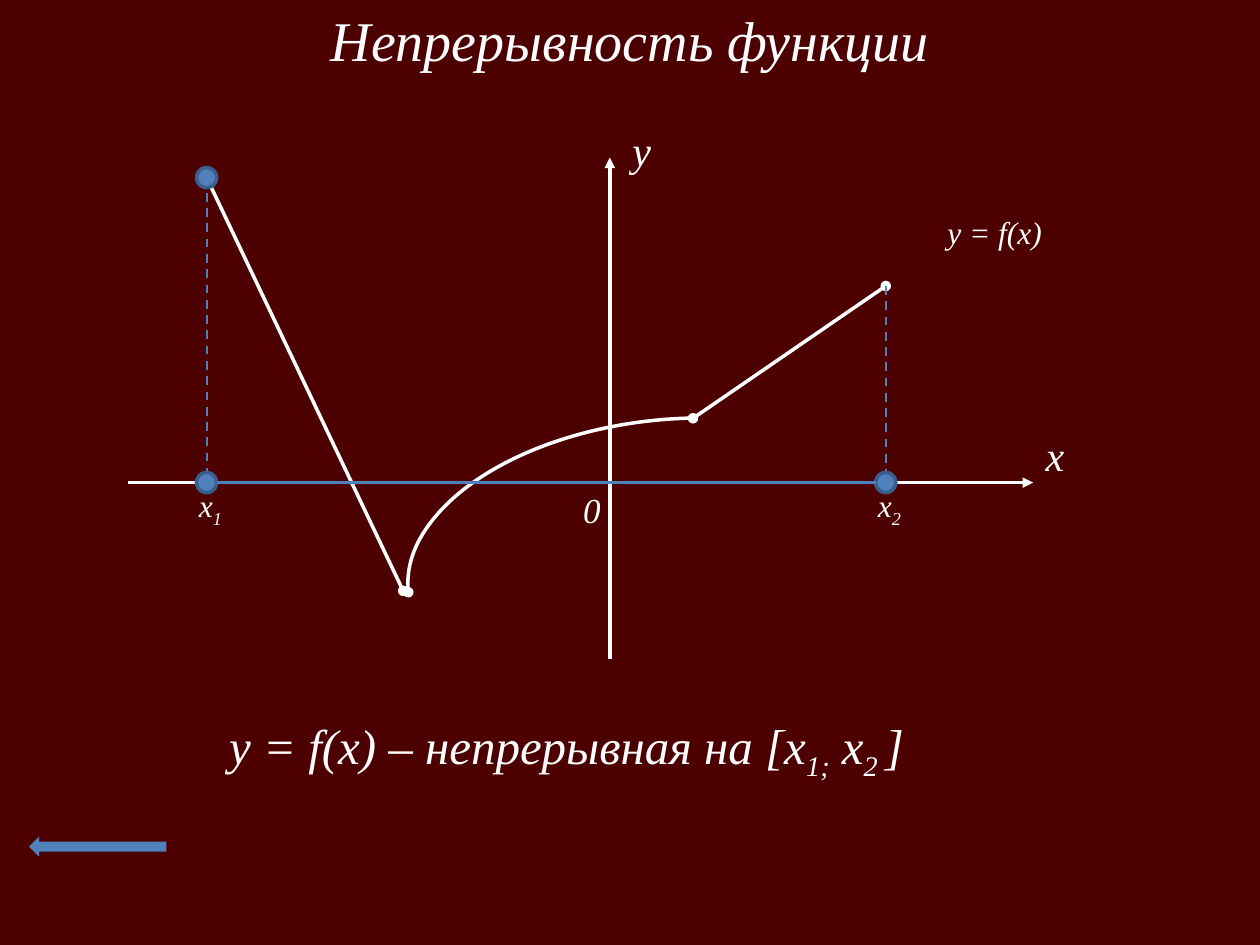
from dataclasses import dataclass
from lxml.etree import SubElement
from pptx import Presentation
from pptx.dml.color import RGBColor
from pptx.enum.dml import MSO_LINE
from pptx.enum.shapes import MSO_CONNECTOR, MSO_SHAPE
from pptx.enum.text import MSO_ANCHOR, MSO_AUTO_SIZE, PP_ALIGN
from pptx.oxml.ns import qn
from pptx.util import Inches, Pt


@dataclass(frozen=True)
class Theme:
    back: RGBColor = RGBColor(0x4C, 0x00, 0x00)
    ink: RGBColor = RGBColor(0xFF, 0xFF, 0xFF)
    blue: RGBColor = RGBColor(0x4F, 0x81, 0xBD)
    rim: RGBColor = RGBColor(0x3A, 0x5F, 0x8C)
    font: str = "Times New Roman"
    title: int = 32
    claim: int = 28
    axis: int = 24
    zero: int = 20
    label: int = 18
    thick: float = 2
    thin: float = 1.25


THEME = Theme()

# Key places of the graph, in inches
LEFT, RIGHT, BASE = 1.64, 7.03, 3.83
START, LOW, BEND, END = (LEFT, 1.41), (3.2, 4.69), (5.5, 3.32), (RIGHT, 2.27)
DOT = 0.16


def add_text(slide, box, *runs, size=THEME.label, wrap=True,
             align=PP_ALIGN.LEFT, anchor=MSO_ANCHOR.TOP):
    """Every second run is a subscript."""
    frame = slide.shapes.add_textbox(*map(Inches, box)).text_frame
    frame.word_wrap = wrap
    frame.auto_size = MSO_AUTO_SIZE.SHAPE_TO_FIT_TEXT
    frame.vertical_anchor = anchor
    para = frame.paragraphs[0]
    para.alignment = align
    for i, words in enumerate(runs):
        run = para.add_run()
        run.text = words
        font = run.font
        font.name, font.size, font.italic = THEME.font, Pt(size), True
        font.color.rgb = THEME.ink
        if i % 2:
            run._r.get_or_add_rPr().set("baseline", "-25000")


def set_line(shape, color, width, dash=False, head=None, tail=None):
    line = shape.line
    line.color.rgb = color
    line.width = Pt(width)
    if dash:
        line.dash_style = MSO_LINE.DASH
    for tag, kind in (("a:headEnd", head), ("a:tailEnd", tail)):
        if kind:
            SubElement(line._get_or_add_ln(), qn(tag)).set("type", kind)


def add_line(slide, start, end, color=THEME.ink, width=THEME.thick, **style):
    line = slide.shapes.add_connector(
        MSO_CONNECTOR.STRAIGHT, *map(Inches, start + end))
    SubElement(line._element.spPr, qn("a:effectLst"))
    set_line(line, color, width, **style)


def add_shape(slide, kind, box, fill=None):
    shape = slide.shapes.add_shape(kind, *map(Inches, box))
    shape.shadow.inherit = False
    if fill is None:
        shape.fill.background()
    else:
        shape.fill.solid()
        shape.fill.fore_color.rgb = fill
    return shape


def add_dot(slide, x, y):
    box = (x - DOT / 2, y - DOT / 2, DOT, DOT)
    dot = add_shape(slide, MSO_SHAPE.OVAL, box, THEME.blue)
    set_line(dot, THEME.rim, THEME.thick)


def add_drop(slide, point):
    add_line(slide, point, (point[0], BASE), THEME.blue, THEME.thin, dash=True)


def add_curve(slide):
    arc = add_shape(slide, MSO_SHAPE.ARC, (4.15, 2.41, 2.32, 4.16))
    arc.adjustments[0] = 162
    arc.adjustments[1] = 8.96
    arc.rotation = 264.2
    set_line(arc, THEME.ink, THEME.thick, head="oval")


def main():
    deck = Presentation()
    deck.slide_width, deck.slide_height = Inches(10), Inches(7.5)
    slide = deck.slides.add_slide(deck.slide_layouts[6])
    slide.background.fill.solid()
    slide.background.fill.fore_color.rgb = THEME.back

    # Title
    add_drop(slide, START)
    add_text(slide, (0, -0.01, 10, 0.64), "Непрерывность функции",
             size=THEME.title, align=PP_ALIGN.CENTER, anchor=MSO_ANCHOR.MIDDLE)

    # Axes and their names
    add_line(slide, (4.84, 1.25), (4.84, 5.23), head="triangle")
    add_line(slide, (8.2, BASE), (1.02, BASE), head="triangle")
    add_text(slide, (8.2, 3.36, 0.55, 0.5), "x", size=THEME.axis)
    add_text(slide, (4.53, 3.83, 0.55, 0.44), "0", size=THEME.zero)
    add_text(slide, (4.92, 0.94, 0.55, 0.5), "y", size=THEME.axis)
    add_text(slide, (7.42, 1.64, 0.96, 0.4), "y = f(x)", wrap=False)

    # Graph of the function
    add_line(slide, START, LOW, head="oval", tail="oval")
    add_curve(slide)
    add_line(slide, BEND, END, head="oval", tail="oval")
    add_drop(slide, END)

    # Interval on the x axis
    for x, mark in ((LEFT, "1"), (RIGHT, "2")):
        add_text(slide, (x - 0.16, 3.81, 0.4, 0.4), "x", mark, wrap=False)
        add_dot(slide, x, BASE)
    add_line(slide, (LEFT + DOT / 2, BASE), (RIGHT - DOT / 2, BASE), THEME.blue)

    # Claim and back arrow
    add_text(slide, (1.72, 5.63, 5.78, 1.04), "y = f(x) – непрерывная на [x",
             "1;", " х", "2 ", "]", size=THEME.claim)
    arrow = add_shape(slide, MSO_SHAPE.LEFT_ARROW, (0.23, 6.64, 1.09, 0.16),
                      THEME.blue)
    arrow.line.fill.background()
    add_dot(slide, *START)

    deck.save("out.pptx")


if __name__ == "__main__":
    main()
